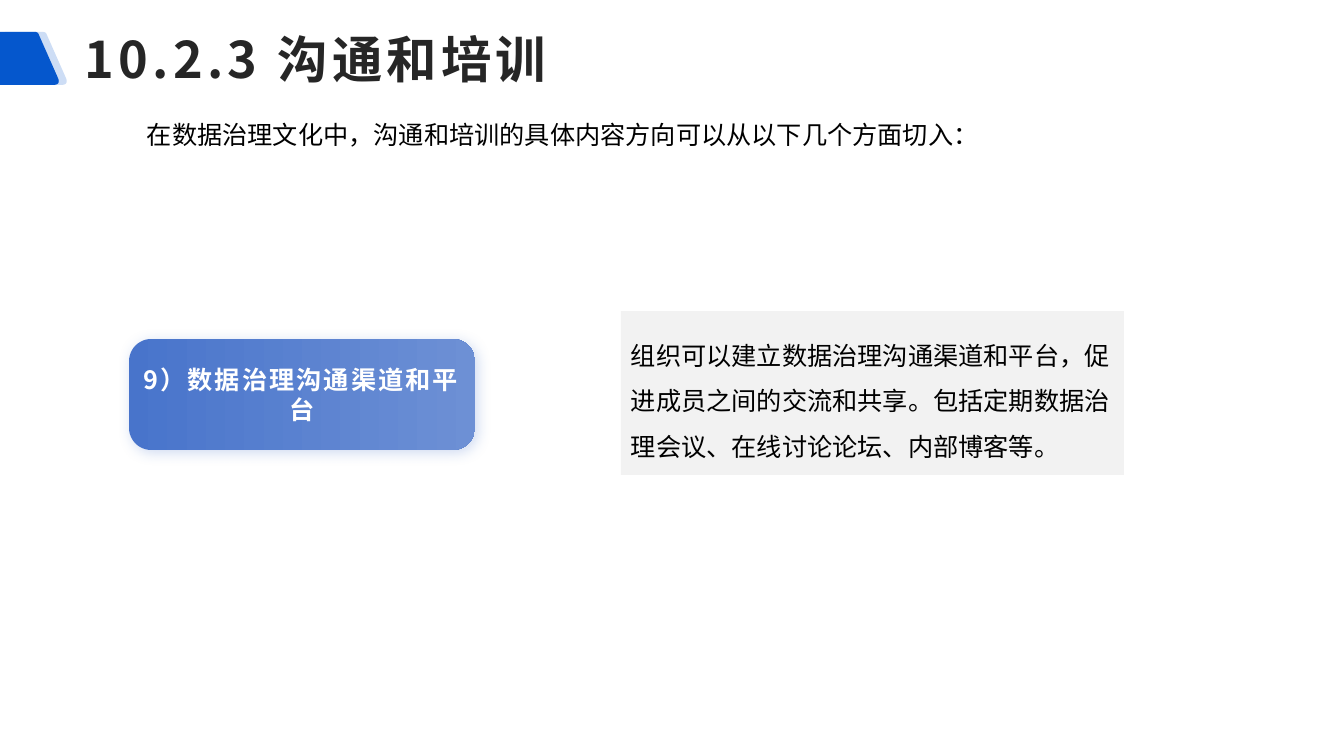
from lxml import etree
from pptx import Presentation
from pptx import util as u
from pptx.dml.color import RGBColor
from pptx.enum import shapes, text
from pptx.oxml.ns import qn

SCALE = 914400 / 100.8
CJK = "Noto Sans CJK SC"
BLUE, BUTTON, BUTTON_END = "0557CD", "4874CB", "6D90D5"

TITLE = dict(words="10.2.3 沟通和培训", size=36, font=CJK, color="262626", bold=True, spacing=3)
INTRO = dict(words="在数据治理文化中，沟通和培训的具体内容方向可以从以下几个方面切入：",
             size=18, font="Arial", color="000000")
TOPIC = dict(words="9）数据治理沟通渠道和平台", size=18, font=CJK, color="FFFFFF",
             bold=True, spacing=1.5)
DETAIL = dict(words="组织可以建立数据治理沟通渠道和平台，促进成员之间的交流和共享。"
                    "包括定期数据治理会议、在线讨论论坛、内部博客等。",
              size=18, font="Times New Roman", color="000000")

TITLE_BOX = (75, 8, 1269, 101)
INTRO_BOX = (137, 114, 991, 40)
TOPIC_BOX = (129, 339, 346, 111)
DETAIL_BOX = (621, 311, 503, 164)

BADGE_CORNERS = [
    ((-6, 35), (-5, 32), (-2, 32)),
    ((35, 32), (38, 32), (39, 35)),
    ((58, 78), (61, 85), (53, 85)),
    ((-20, 85), (-28, 85), (-25, 78)),
]
BADGES = [(8, 20), (0, 100)]
CURVE_STEPS = 8


def px(n):
    return round(n * SCALE)


def rgb(value):
    return RGBColor.from_string(value)


def add(parent, tag, **attrs):
    return etree.SubElement(parent, qn(tag), {k: str(v) for k, v in attrs.items()})


def plain(sp, color):
    sp.shadow.inherit = False
    sp.line.fill.background()
    sp.fill.solid()
    sp.fill.fore_color.rgb = rgb(color)


def write(sp, content, anchor, align=text.PP_ALIGN.LEFT, line_spacing=None):
    tf = sp.text_frame
    tf.word_wrap = True
    tf.vertical_anchor = anchor
    p = tf.paragraphs[0]
    p.alignment = align
    p.line_spacing = line_spacing
    r = p.add_run()
    r.text = content["words"]
    r.font.size = u.Pt(content["size"])
    r.font.bold = content.get("bold", False)
    r.font.color.rgb = rgb(content["color"])
    r.font.name = content["font"]
    rpr = r.font._element
    rpr.set("spc", str(round(content.get("spacing", 0) * 100)))
    rpr.find(qn("a:latin")).addnext(etree.Element(qn("a:ea"), typeface=CJK))
    return tf


def add_badge(s, shift, opacity):
    points = []
    for a, b, c in BADGE_CORNERS:
        for i in range(CURVE_STEPS + 1):
            t = i / CURVE_STEPS
            x, y = ((1 - t) ** 2 * m + 2 * t * (1 - t) * n + t * t * o
                    for m, n, o in zip(a, b, c))
            points.append((px(x + shift), px(y)))
    outline = s.shapes.build_freeform(*points[0])
    outline.add_line_segments(points[1:], close=True)
    sp = outline.convert_to_shape()
    plain(sp, BLUE)
    if opacity < 100:
        add(sp._element.spPr.find(".//" + qn("a:srgbClr")), "a:alpha", val=opacity * 1000)


def add_topic(s):
    sp = s.shapes.add_shape(shapes.MSO_SHAPE.ROUNDED_RECTANGLE, *map(px, TOPIC_BOX))
    sp.adjustments[0] = 0.2
    plain(sp, BUTTON)
    sp.fill.gradient()
    sp.fill.gradient_angle = 0
    for stop, color, position in zip(sp.fill.gradient_stops, (BUTTON, BUTTON_END), (0, 1)):
        stop.color.rgb = rgb(color)
        stop.position = position
    effects = sp._element.spPr.find(qn("a:effectLst"))
    shadow = add(effects, "a:outerShdw", blurRad=u.Pt(10), dist=u.Pt(3),
                 dir=45 * 60000, algn="tl", rotWithShape=0)
    add(add(shadow, "a:srgbClr", val=BUTTON), "a:alpha", val=25000)
    tf = write(sp, TOPIC, text.MSO_ANCHOR.MIDDLE, text.PP_ALIGN.CENTER)
    tf.margin_left = tf.margin_right = tf.margin_top = tf.margin_bottom = 0


def main():
    prs = Presentation()
    prs.slide_width, prs.slide_height = px(1344), px(756)
    s = prs.slides.add_slide(prs.slide_layouts[6])
    for shift, opacity in BADGES:
        add_badge(s, shift, opacity)
    write(s.shapes.add_textbox(*map(px, TITLE_BOX)), TITLE, text.MSO_ANCHOR.MIDDLE)
    add_topic(s)
    panel = s.shapes.add_shape(shapes.MSO_SHAPE.RECTANGLE, *map(px, DETAIL_BOX))
    plain(panel, "F2F2F2")
    write(panel, DETAIL, text.MSO_ANCHOR.MIDDLE, line_spacing=1.5)
    write(s.shapes.add_textbox(*map(px, INTRO_BOX)), INTRO, text.MSO_ANCHOR.TOP)
    prs.save("out.pptx")


if __name__ == "__main__":
    main()
